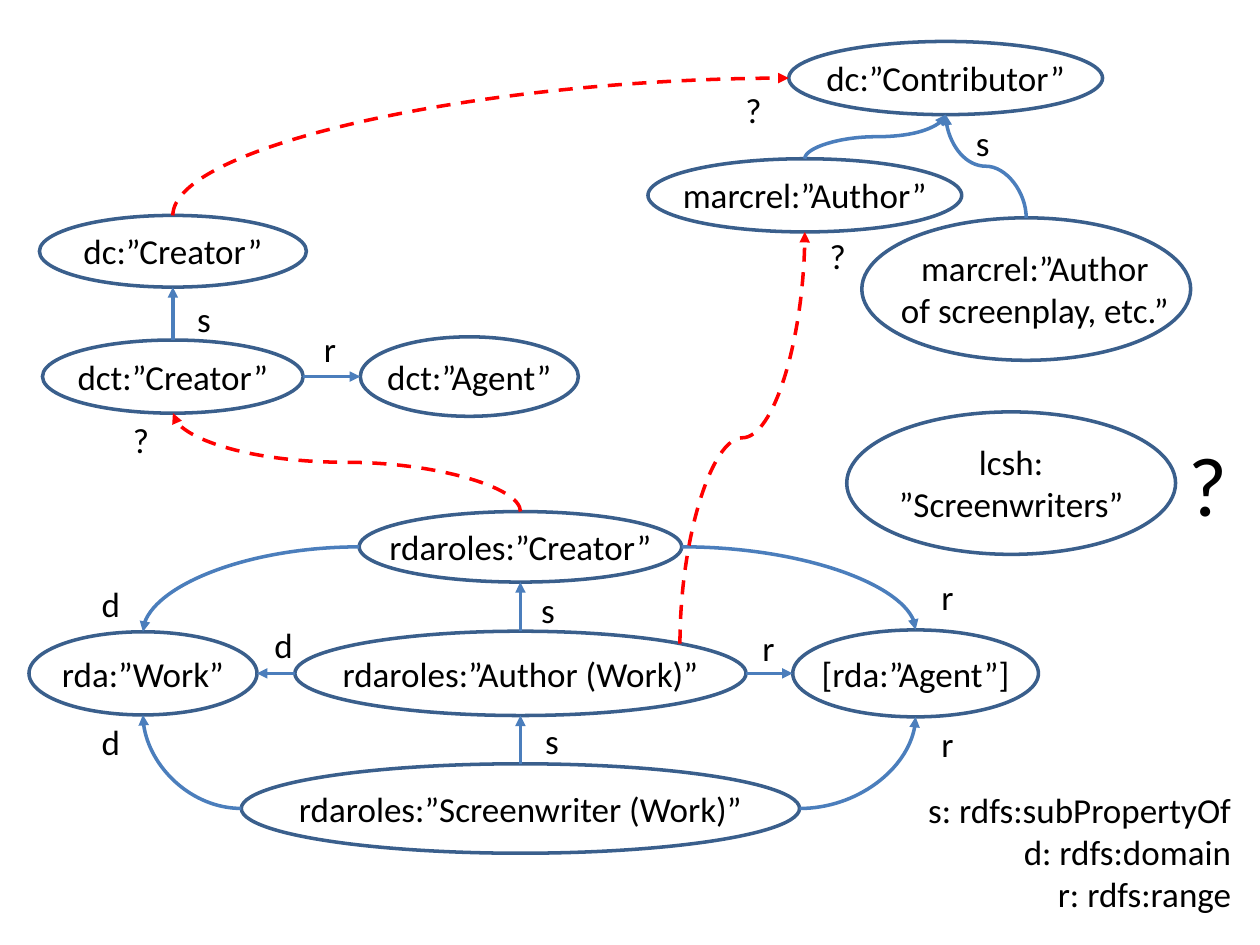
from dataclasses import dataclass
from math import sqrt
from typing import Optional

from lxml.etree import SubElement
from pptx import Presentation
from pptx.dml.color import RGBColor
from pptx.enum.dml import MSO_LINE
from pptx.enum.shapes import MSO_CONNECTOR, MSO_SHAPE
from pptx.enum.text import MSO_AUTO_SIZE, PP_ALIGN
from pptx.oxml.ns import qn
from pptx.slide import Slide
from pptx.util import Pt


@dataclass(frozen=True)
class Theme:
    font: str = "Calibri"
    body_size: float = 20
    query_size: float = 48
    line_width: float = 2
    text: RGBColor = RGBColor(0x00, 0x00, 0x00)
    fill: RGBColor = RGBColor(0xFF, 0xFF, 0xFF)
    outline: RGBColor = RGBColor(0x3A, 0x5F, 0x8C)
    known: RGBColor = RGBColor(0x4B, 0x7E, 0xBC)
    unknown: RGBColor = RGBColor(0xFF, 0x00, 0x00)


@dataclass(frozen=True)
class Node:
    """An ellipse given by its centre, with a text box over it."""
    text: str
    x: float
    y: float
    width: float
    height: float
    text_width: float
    text_shift: float = 0
    wrap: bool = True

    def site(self, side: str) -> tuple[float, float]:
        across, down = SIDES[side]
        return self.x + across * self.width / 2, self.y + down * self.height / 2


@dataclass(frozen=True)
class Arrow:
    """A relation between two nodes; the label "?" marks an unknown one."""
    start: str
    start_side: str
    end: str
    end_side: str
    label: str = ""
    label_x: float = 0
    label_y: float = 0


THEME = Theme()
DIAGONAL = 1 / sqrt(2)
SIDES = {
    "top": (0, -1), "bottom": (0, 1), "left": (-1, 0), "right": (1, 0),
    "top right": (DIAGONAL, -DIAGONAL),
}
LEVEL_SIDES = {"left", "right"}
LINE_HEIGHT = 24
INSETS = 7.5
LABEL_WIDTH = 36

NODES = {
    "work": Node("rda:”Work”", 81.7, 384.8, 130.3, 47.5, 118.8),
    "role creator": Node("rdaroles:”Creator”", 297.4, 312.5, 184.3, 40.3, 183),
    "rda agent": Node("[rda:”Agent”]", 523.2, 384.8, 140.4, 49.7, 131.8),
    "role author": Node("rdaroles:”Author (Work)”", 297.4, 384.8, 257.8, 48.2, 234),
    "role screenwriter": Node("rdaroles:”Screenwriter (Work)”", 297.4, 462, 319, 51.1, 276.5),
    "dct creator": Node("dct:”Creator”", 98.8, 215.2, 149, 41.8, 146.9),
    "dc creator": Node("dc:”Creator”", 98.8, 143.6, 152.6, 41, 156.2),
    "dct agent": Node("dct:”Agent”", 268.2, 215.2, 124.6, 45.4, 123.8),
    "marc author": Node("marcrel:”Author”", 459.9, 111.6, 179.3, 41.8, 161.3),
    "marc screenplay": Node("marcrel:”Author\nof screenplay, etc.”",
                            586.4, 165.2, 187.9, 81.4, 177.8, text_shift=5),
    "contributor": Node("dc:”Contributor”", 540.4, 44.6, 179.3, 41.8, 161.3),
    "lcsh": Node("lcsh:\n”Screenwriters”", 577.8, 276.1, 187.9, 81.4, 144, wrap=False),
}

ARROWS = [
    Arrow("role creator", "left", "work", "top", "d", 63.4, 344.9),
    Arrow("role creator", "right", "rda agent", "top", "r", 541.4, 341.3),
    Arrow("role author", "left", "work", "right", "d", 162, 368.6),
    Arrow("role author", "right", "rda agent", "left", "r", 439.2, 370.1),
    Arrow("role author", "top", "role creator", "bottom", "s", 313.2, 348.5),
    Arrow("role screenwriter", "left", "work", "bottom", "d", 63.4, 424.1),
    Arrow("role screenwriter", "right", "rda agent", "bottom", "r", 541.4, 424.8),
    Arrow("role screenwriter", "top", "role author", "bottom", "s", 315.4, 423.4),
    Arrow("dct creator", "top", "dc creator", "bottom", "s", 116.6, 182.2),
    Arrow("dct creator", "right", "dct agent", "left", "r", 188.6, 199.4),
    Arrow("marc author", "top", "contributor", "bottom"),
    Arrow("marc screenplay", "top", "contributor", "bottom", "s", 561.6, 81.4),
    Arrow("role author", "top right", "marc author", "bottom", "?", 478.8, 146.2),
    Arrow("role creator", "top", "dct creator", "bottom", "?", 80.6, 251.3),
    Arrow("dc creator", "top", "contributor", "left", "?", 430.6, 62.6),
]

LEGEND = "s: rdfs:subPropertyOf\nd: rdfs:domain\nr: rdfs:range"


def add_text(page: Slide, text: str, x: float, y: float, width: float,
             align: Optional[PP_ALIGN] = PP_ALIGN.CENTER,
             size: float = THEME.body_size, wrap: bool = True) -> None:
    """Add a text box centred on (x, y), one paragraph per line."""
    lines = text.split("\n")
    height = len(lines) * LINE_HEIGHT * size / THEME.body_size + INSETS
    box = page.shapes.add_textbox(Pt(x - width / 2), Pt(y - height / 2), Pt(width), Pt(height))
    frame = box.text_frame
    frame.word_wrap = wrap
    frame.auto_size = MSO_AUTO_SIZE.SHAPE_TO_FIT_TEXT
    frame.text = text
    for para in frame.paragraphs:
        para.alignment = align
        para.font.name = THEME.font
        para.font.size = Pt(size)
        para.font.color.rgb = THEME.text


def add_node(page: Slide, node: Node) -> None:
    ellipse = page.shapes.add_shape(
        MSO_SHAPE.OVAL, Pt(node.x - node.width / 2), Pt(node.y - node.height / 2),
        Pt(node.width), Pt(node.height))
    ellipse.shadow.inherit = False
    ellipse.fill.solid()
    ellipse.fill.fore_color.rgb = THEME.fill
    ellipse.line.color.rgb = THEME.outline
    ellipse.line.width = Pt(THEME.line_width)
    add_text(page, node.text, node.x + node.text_shift, node.y, node.text_width, wrap=node.wrap)


def add_arrow(page: Slide, arrow: Arrow) -> None:
    """Add a curve; one that leaves its node upwards is a level curve turned by 270 degrees."""
    start_x, start_y = NODES[arrow.start].site(arrow.start_side)
    end_x, end_y = NODES[arrow.end].site(arrow.end_side)
    middle_x, middle_y = (start_x + end_x) / 2, (start_y + end_y) / 2
    across, down = end_x - start_x, end_y - start_y
    leaves_level = arrow.start_side in LEVEL_SIDES
    if not leaves_level:
        across, down = -down, across
    curve = page.shapes.add_connector(
        MSO_CONNECTOR.CURVE,
        Pt(middle_x - across / 2), Pt(middle_y - down / 2),
        Pt(middle_x + across / 2), Pt(middle_y + down / 2))
    if not leaves_level:
        curve.rotation = 270
    properties = curve._element.spPr
    if leaves_level != (arrow.end_side in LEVEL_SIDES):
        properties.find(qn("a:prstGeom")).set("prst", "curvedConnector2")

    unknown = arrow.label == "?"
    curve.line.color.rgb = THEME.unknown if unknown else THEME.known
    curve.line.width = Pt(THEME.line_width)
    if unknown:
        curve.line.dash_style = MSO_LINE.DASH
    SubElement(properties.find(qn("a:ln")), qn("a:tailEnd"), type="triangle")
    SubElement(properties, qn("a:effectLst"))


def main() -> None:
    deck = Presentation()
    deck.slide_width, deck.slide_height = Pt(720), Pt(540)
    page = deck.slides.add_slide(deck.slide_layouts[6])
    for node in NODES.values():
        add_node(page, node)
    for arrow in ARROWS:
        add_arrow(page, arrow)
        if arrow.label:
            add_text(page, arrow.label, arrow.label_x, arrow.label_y, LABEL_WIDTH)
    add_text(page, LEGEND, 616, 487, 189.4, PP_ALIGN.RIGHT, wrap=False)
    add_text(page, "?", 681.9, 276.1, 20.2, None, THEME.query_size)
    deck.save("out.pptx")


if __name__ == "__main__":
    main()
